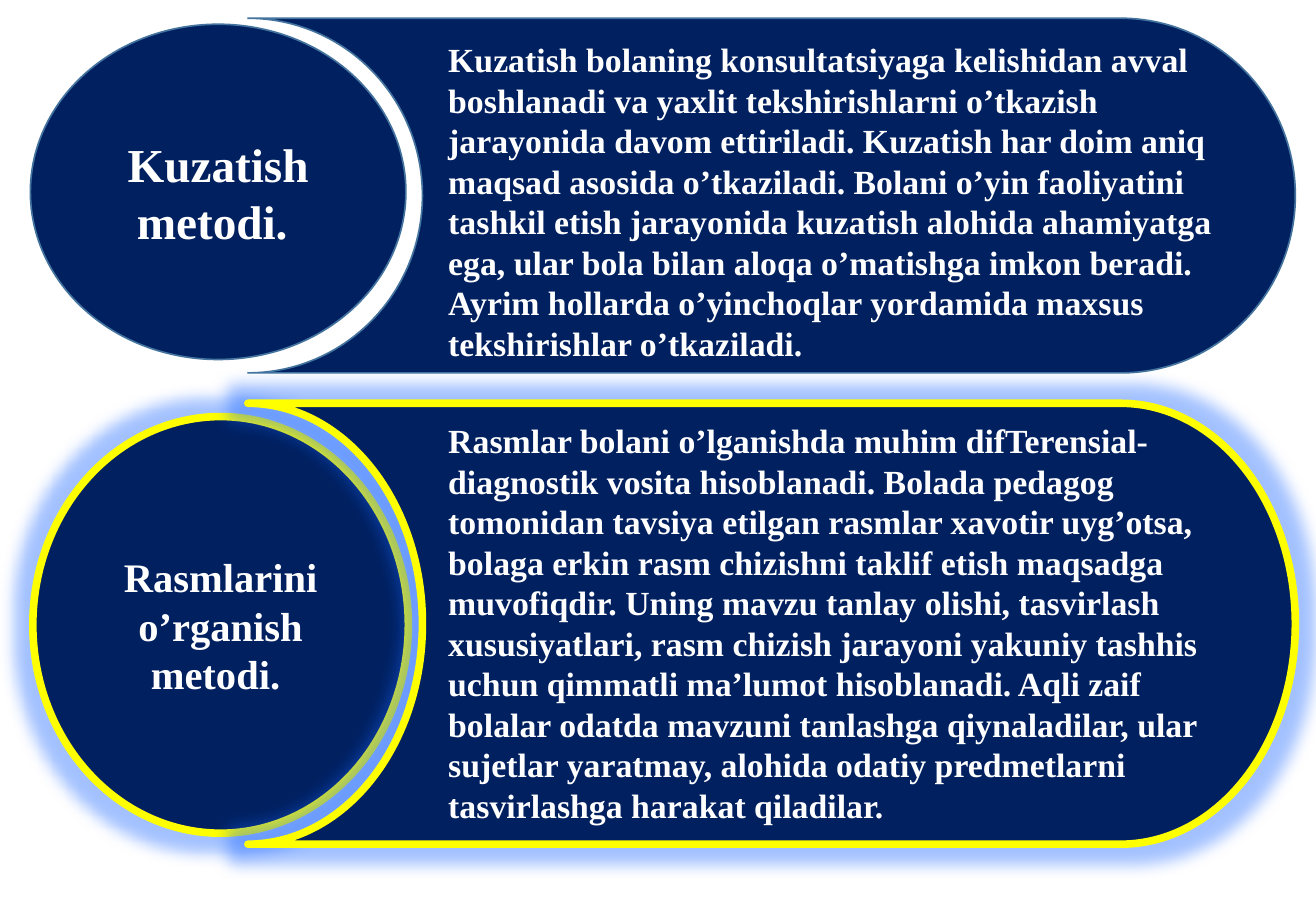
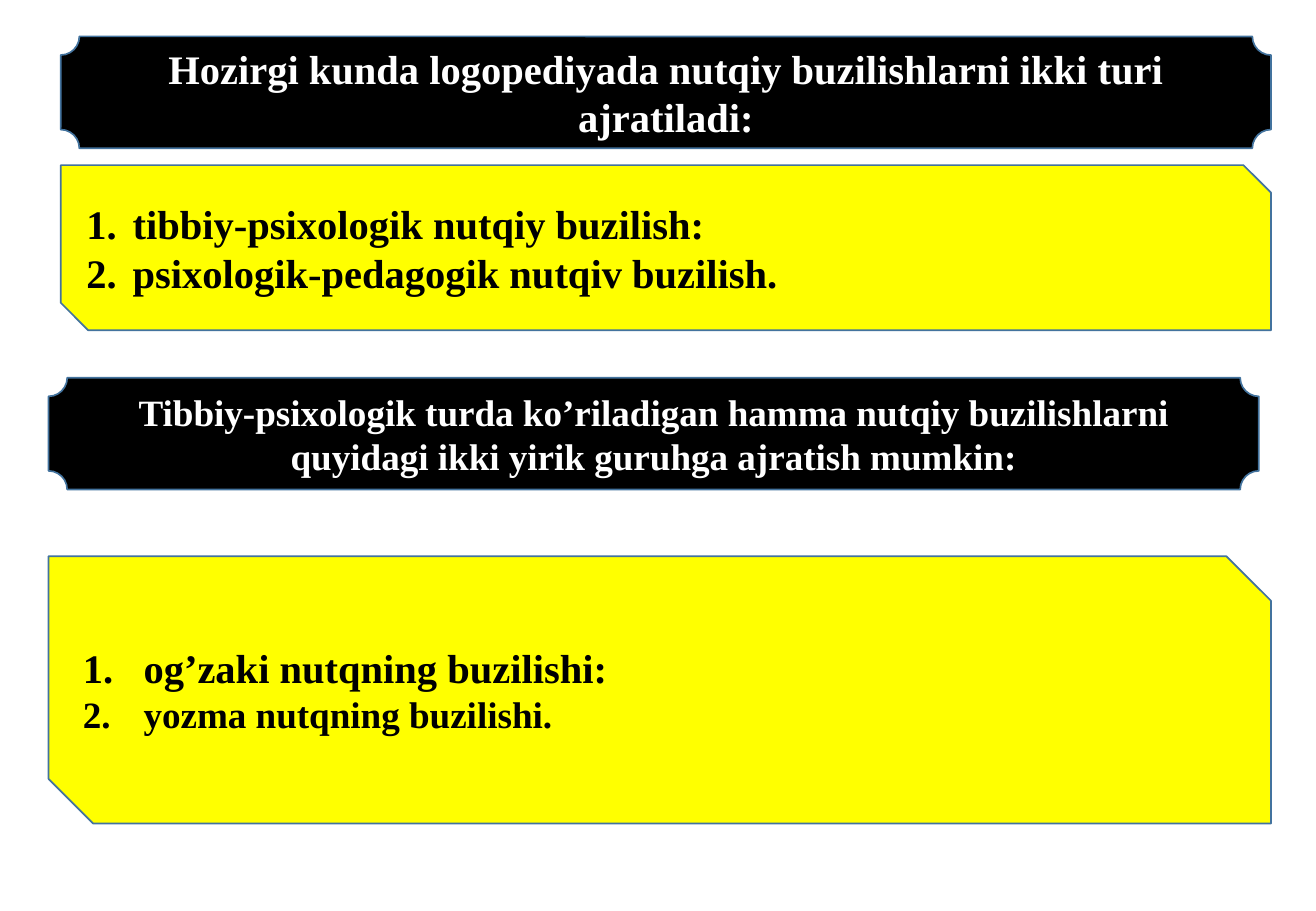
"""Build two slides on observation methods and kinds of speech disorder."""
from dataclasses import dataclass

from lxml import etree
from pptx import Presentation
from pptx import util as u
from pptx.dml import color
from pptx.enum import shapes, text
from pptx.oxml import ns

COLORS = {
    "navy": "002060",
    "edge": "43739E",
    "yellow": "FFFF00",
    "black": "000000",
    "white": "FFFFFF",
    "glow": "1A66FF",
}
FONT = {"name": "Times New Roman", "bold": True}
CENTER = text.PP_ALIGN.CENTER
LEFT = text.PP_ALIGN.LEFT
SHAPE = shapes.MSO_SHAPE
GLOW_RADIUS = u.Pt(18)
BODY_SIZE = 20

Box = tuple[float, float, float, float]


@dataclass(frozen=True)
class Line:
    text: str
    size: int


@dataclass(frozen=True)
class Outline:
    color: str = "edge"
    width: float = 1
    glow: bool = False


@dataclass(frozen=True)
class Method:
    title: Line
    body: str
    circle: Box
    top: float
    height: float
    body_top: float
    body_height: float
    outline: Outline


@dataclass(frozen=True)
class Section:
    heading: Line
    heading_box: Box
    items: tuple[Line, ...]
    items_box: Box
    indent: float


METHODS = (
    Method(
        Line("Kuzatish metodi. ", 28),
        "Kuzatish bolaning konsultatsiyaga kelishidan avval boshlanadi va yaxlit "
        "tekshirishlarni o’tkazish jarayonida davom ettiriladi. Kuzatish har doim "
        "aniq maqsad asosida o’tkaziladi. Bolani o’yin faoliyatini tashkil etish "
        "jarayonida kuzatish alohida ahamiyatga ega, ular bola bilan aloqa "
        "o’matishga imkon beradi. Ayrim hollarda o’yinchoqlar yordamida maxsus "
        "tekshirishlar o’tkaziladi.",
        (0.25, 0.2, 3.09, 2.76), 0.15, 2.92, 0.27, 2.79, Outline(),
    ),
    Method(
        Line("Rasmlarini o’rganish metodi. ", 24),
        "Rasmlar bolani o’lganishda muhim difTerensial-diagnostik vosita "
        "hisoblanadi. Bolada pedagog tomonidan tavsiya etilgan rasmlar xavotir "
        "uyg’otsa, bolaga erkin rasm chizishni taklif etish maqsadga muvofiqdir. "
        "Uning mavzu tanlay olishi, tasvirlash xususiyatlari, rasm chizish jarayoni "
        "yakuniy tashhis uchun qimmatli ma’lumot hisoblanadi. Aqli zaif bolalar "
        "odatda mavzuni tanlashga qiynaladilar, ular sujetlar yaratmay, alohida "
        "odatiy predmetlarni tasvirlashga harakat qiladilar.",
        (0.27, 3.43, 3.09, 3.43), 3.32, 3.63, 3.41, 3.47,
        Outline("yellow", 4.5, True),
    ),
)

SECTIONS = (
    Section(
        Line("Hozirgi kunda logopediyada nutqiy buzilishlarni ikki turi ajratiladi:", 24),
        (0.5, 0.3, 9.96, 0.92),
        (
            Line("tibbiy-psixologik nutqiy buzilish:", 24),
            Line("psixologik-pedagogik nutqiv buzilish.", 24),
        ),
        (0.5, 1.36, 9.96, 1.36), 0.38,
    ),
    Section(
        Line(
            "Tibbiy-psixologik turda ko’riladigan hamma nutqiy buzilishlarni "
            "quyidagi ikki yirik guruhga ajratish mumkin:", 22,
        ),
        (0.4, 3.11, 9.96, 0.92),
        (Line("og’zaki nutqning buzilishi:", 24), Line("yozma nutqning buzilishi.", 22)),
        (0.4, 4.58, 10.06, 2.2), 0.5,
    ),
)


def rgb(name: str) -> color.RGBColor:
    """Return the named palette colour."""
    return color.RGBColor.from_string(COLORS[name])


def inches(box: Box) -> list[u.Inches]:
    """Turn a box in inches into lengths."""
    return [u.Inches(value) for value in box]


def add_glow(shape) -> None:
    """Put a soft translucent glow around a shape."""
    effects = shape._element.spPr.find(ns.qn("a:effectLst"))
    glow = etree.SubElement(effects, ns.qn("a:glow"), rad=str(int(GLOW_RADIUS)))
    tint = etree.SubElement(glow, ns.qn("a:srgbClr"), val=COLORS["glow"])
    etree.SubElement(tint, ns.qn("a:alpha"), val="40000")


def add_panel(slide, kind, box: Box, fill: str, outline: Outline = Outline()):
    """Add a filled, outlined preset shape."""
    shape = slide.shapes.add_shape(kind, *inches(box))
    shape.shadow.inherit = False
    shape.fill.solid()
    shape.fill.fore_color.rgb = rgb(fill)
    shape.line.color.rgb = rgb(outline.color)
    shape.line.width = u.Pt(outline.width)
    if outline.glow:
        add_glow(shape)
    return shape


def number(paragraph, indent: float) -> None:
    """Number a paragraph with a hanging indent."""
    properties = paragraph._p.get_or_add_pPr()
    hang = int(u.Inches(indent))
    properties.set("marL", str(hang))
    properties.set("indent", str(-hang))
    etree.SubElement(properties, ns.qn("a:buAutoNum"), type="arabicPeriod")


def write(shape, lines: tuple[Line, ...], ink: str, align=CENTER,
          anchor=text.MSO_ANCHOR.MIDDLE, indent: float = 0) -> None:
    """Write lines into a shape, numbered when an indent is given."""
    frame = shape.text_frame
    frame.word_wrap = True
    frame.vertical_anchor = anchor
    for index, line in enumerate(lines):
        paragraph = frame.add_paragraph() if index else frame.paragraphs[0]
        paragraph.alignment = align
        if indent:
            number(paragraph, indent)
        run = paragraph.add_run()
        run.text = line.text
        run.font.color.rgb = rgb(ink)
        for name, value in {**FONT, "size": u.Pt(line.size)}.items():
            setattr(run.font, name, value)


def draw_method(slide, method: Method) -> None:
    """Draw a titled circle beside its description band."""
    circle = add_panel(slide, SHAPE.OVAL, method.circle, "navy", method.outline)
    write(circle, (method.title,), "white")
    band = add_panel(slide, SHAPE.FLOWCHART_STORED_DATA,
                     (2.04, method.top, 8.62, method.height), "navy", method.outline)
    band.rotation = 180
    body = slide.shapes.add_textbox(
        *inches((3.59, method.body_top, 6.69, method.body_height)))
    write(body, (Line(method.body, BODY_SIZE),), "white", LEFT, text.MSO_ANCHOR.TOP)
    body.text_frame.auto_size = text.MSO_AUTO_SIZE.SHAPE_TO_FIT_TEXT


def draw_section(slide, section: Section) -> None:
    """Draw a heading plaque above its numbered list."""
    heading = add_panel(slide, SHAPE.PLAQUE, section.heading_box, "black")
    write(heading, (section.heading,), "white")
    items = add_panel(slide, SHAPE.SNIP_2_DIAG_RECTANGLE, section.items_box, "yellow")
    write(items, section.items, "black", LEFT, indent=section.indent)


def main() -> None:
    """Build and save the presentation."""
    presentation = Presentation()
    presentation.slide_width = u.Inches(10.83)
    presentation.slide_height = u.Inches(7.5)
    for draw, entries in ((draw_method, METHODS), (draw_section, SECTIONS)):
        slide = presentation.slides.add_slide(presentation.slide_layouts[6])
        for entry in entries:
            draw(slide, entry)
    presentation.save("out.pptx")


if __name__ == "__main__":
    main()
